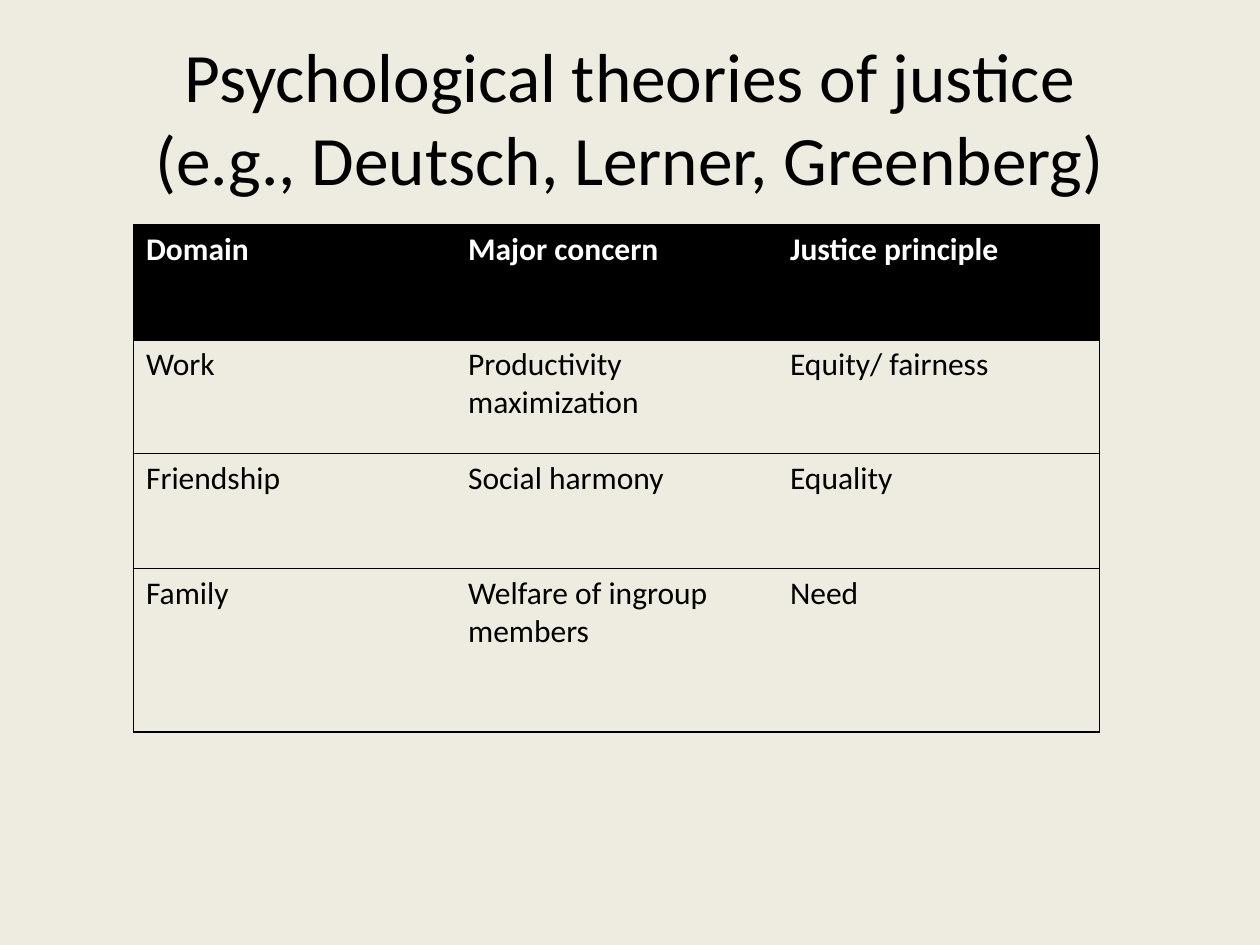
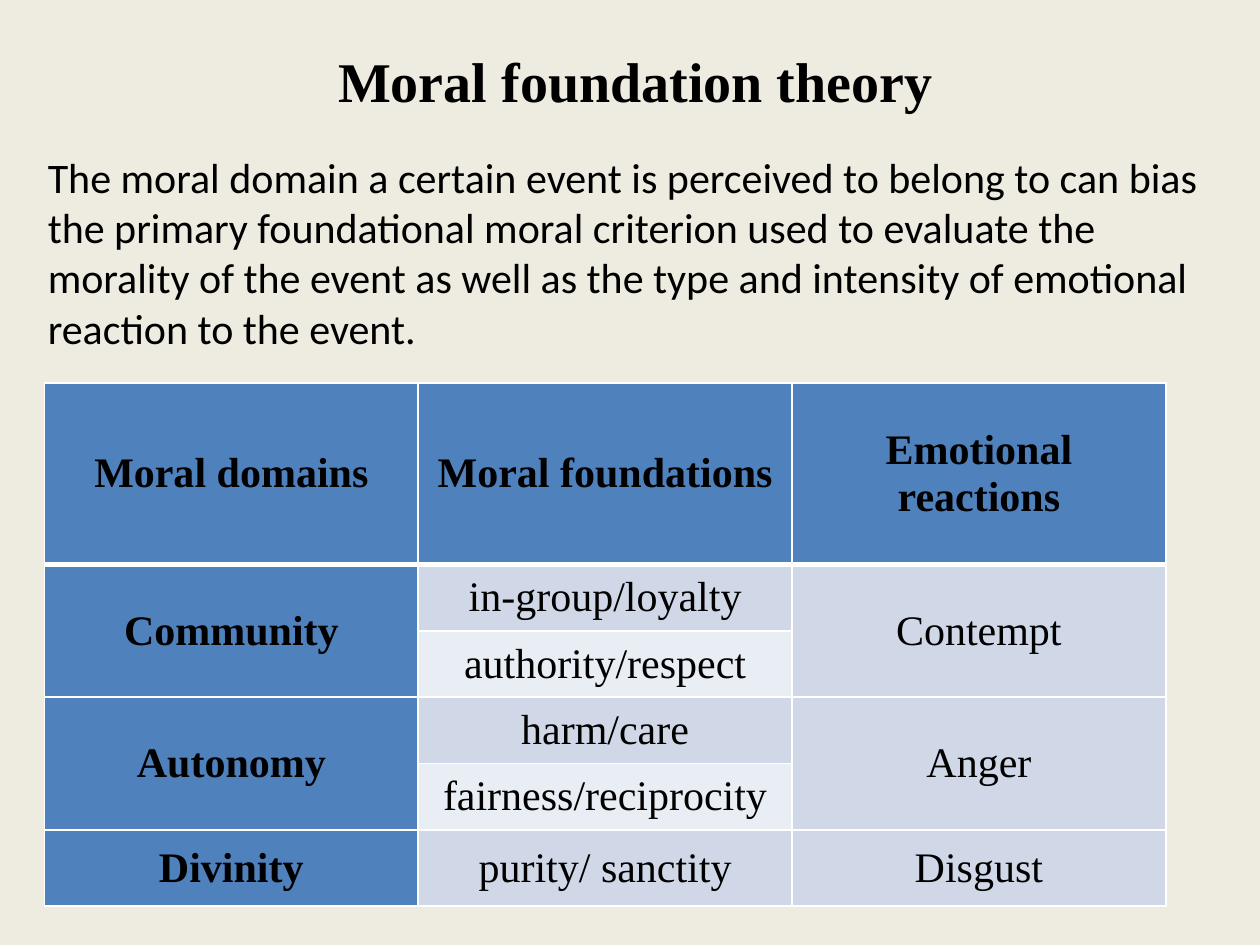
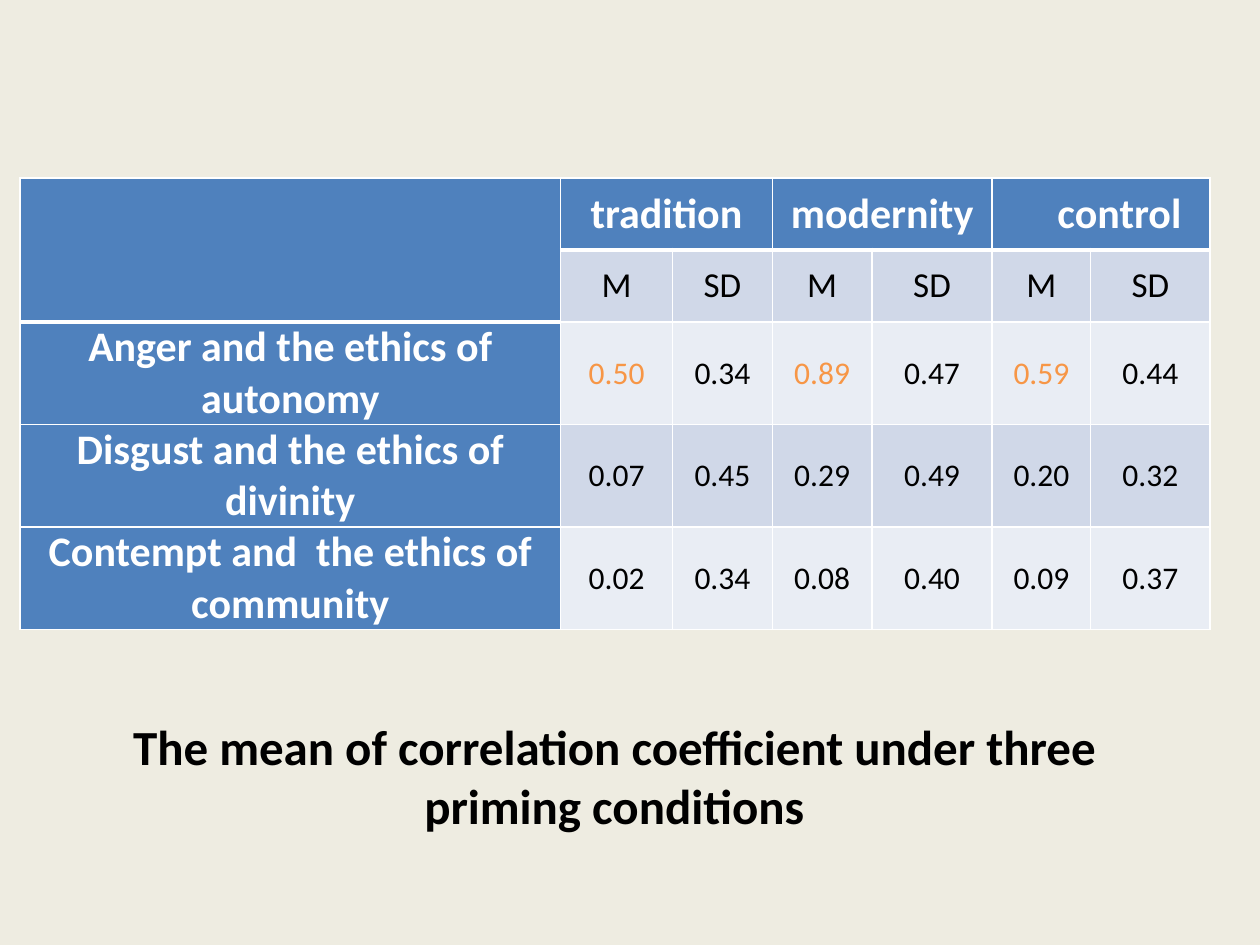
from dataclasses import dataclass, replace
from typing import Any, NamedTuple, Optional

from pptx import Presentation
from pptx.dml.color import RGBColor
from pptx.enum.text import MSO_ANCHOR as Anchor, PP_ALIGN as Align
from pptx.oxml.xmlchemy import OxmlElement as Node
from pptx.util import Pt

CREAM = RGBColor(0xEE, 0xEC, 0xE1)
BLACK = RGBColor(0x00, 0x00, 0x00)
WHITE = RGBColor(0xFF, 0xFF, 0xFF)
BLUE = RGBColor(0x4F, 0x81, 0xBD)
MIST = RGBColor(0xD0, 0xD8, 0xE8)
PALE = RGBColor(0xE9, 0xED, 0xF4)
ORANGE = RGBColor(0xF7, 0x96, 0x46)

SANS = "Calibri"
SERIF = "Times New Roman"
PLAIN = "{2D5ABB26-0587-4C30-8999-92F81FD0307C}"
TIGHT = {"margin_left": Pt(5), "margin_right": Pt(5),
         "margin_top": 0, "margin_bottom": 0,
         "vertical_anchor": Anchor.MIDDLE}


@dataclass(frozen=True)
class Look:
    size: float
    color: RGBColor = BLACK
    bold: bool = False
    font: str = SANS
    align: Align = Align.CENTER
    indent: float = 0


@dataclass(frozen=True)
class Box:
    left: float
    top: float
    width: float
    height: float
    text: str
    look: Look
    anchor: Anchor = Anchor.TOP


class Cell(NamedTuple):
    text: str
    look: Look
    fill: Optional[RGBColor] = None


class Span(NamedTuple):
    row: int
    col: int
    down: int
    right: int


@dataclass(frozen=True)
class Grid:
    left: float
    top: float
    cols: list[float]
    rows: list[float]
    cells: list[list[Cell]]
    heads: list[int]
    line: RGBColor
    thin: float
    inner: bool = True
    spans: tuple[Span, ...] = ()
    form: Optional[dict[str, Any]] = None


def put(item: Any, form: dict[str, Any]) -> None:
    for name, value in form.items():
        setattr(item, name, value)


def write(frame: Any, text: str, look: Look) -> None:
    frame.text = text
    para = frame.paragraphs[0]
    para.alignment = look.align
    if look.indent:
        para._p.get_or_add_pPr().set("indent", str(Pt(look.indent)))
    for run in para.runs:
        put(run.font, {"size": Pt(look.size), "bold": look.bold, "name": look.font})
        run.font.color.rgb = look.color


def draw_box(slide: Any, box: Box) -> None:
    shape = slide.shapes.add_textbox(
        Pt(box.left), Pt(box.top), Pt(box.width), Pt(box.height))
    put(shape.text_frame, {"word_wrap": True, "vertical_anchor": box.anchor})
    write(shape.text_frame, box.text, box.look)


def edge(side: str, width: float, color: RGBColor) -> Any:
    line = Node(f"a:ln{side}")
    line.set("w", str(Pt(width)))
    fill = Node("a:solidFill" if width else "a:noFill")
    if width:
        tint = Node("a:srgbClr")
        tint.set("val", str(color))
        fill.append(tint)
    line.append(fill)
    return line


def frame_cell(cell: Any, grid: Grid, row: int, col: int) -> None:
    head = grid.heads[col]
    last = len(grid.cols) - 1
    widths = {
        "L": grid.thin if grid.inner or col == 0 else 0,
        "R": grid.thin if grid.inner or col == last else 0,
        "T": 3 if row == head else grid.thin,
        "B": 3 if row + 1 == head else grid.thin,
    }
    props = cell._tc.get_or_add_tcPr()
    for spot, (side, width) in enumerate(widths.items()):
        props.insert(spot, edge(side, width, grid.line))


def draw_grid(slide: Any, grid: Grid) -> None:
    table = slide.shapes.add_table(
        len(grid.rows), len(grid.cols), Pt(grid.left), Pt(grid.top),
        Pt(sum(grid.cols)), Pt(sum(grid.rows))).table
    table._tbl.tblPr.find("{*}tableStyleId").text = PLAIN
    for col, width in zip(table.columns, grid.cols):
        col.width = Pt(width)
    for row, height in zip(table.rows, grid.rows):
        row.height = Pt(height)
    for r, line in enumerate(grid.cells):
        for c, item in enumerate(line):
            cell = table.cell(r, c)
            put(cell, grid.form or {})
            if item.fill is None:
                cell.fill.background()
            else:
                cell.fill.solid()
                cell.fill.fore_color.rgb = item.fill
            frame_cell(cell, grid, r, c)
            if item.text:
                write(cell.text_frame, item.text, item.look)
    for row, col, down, right in grid.spans:
        table.cell(row, col).merge(table.cell(row + down - 1, col + right - 1))


def justice() -> tuple[list[Box], Grid]:
    body = Look(18, align=Align.LEFT)
    head = replace(body, color=WHITE, bold=True)
    rows = [
        ("Domain", "Major concern", "Justice principle"),
        ("Work", "Productivity maximization", "Equity/ fairness"),
        ("Friendship", "Social harmony", "Equality"),
        ("Family", "Welfare of ingroup members", "Need"),
    ]
    cells = [[Cell(text, body if r else head, None if r else BLACK) for text in row]
             for r, row in enumerate(rows)]
    title = Box(36, 21.6, 648, 90,
                "Psychological theories of justice\v(e.g., Deutsch, Lerner, Greenberg)",
                Look(39.6), Anchor.MIDDLE)
    return [title], Grid(76.3, 128.2, [184] * 3, [65.5] * 3 + [93.6], cells,
                         [1] * 3, BLACK, 0.75, inner=False)


def morals() -> tuple[list[Box], Grid]:
    body = Look(24, font=SERIF)
    head = replace(body, bold=True)
    rows = [
        ("Moral domains", "Moral foundations", "Emotional reactions"),
        ("Community", "in-group/loyalty", "Contempt"),
        ("", "authority/respect", ""),
        ("Autonomy", "harm/care", "Anger"),
        ("", "fairness/reciprocity", ""),
        ("Divinity", "purity/ sanctity", "Disgust"),
    ]
    cells = [[Cell(text, head, BLUE) if r == 0 or c == 0
              else Cell(text, body, MIST if r % 2 else PALE)
              for c, text in enumerate(row)] for r, row in enumerate(rows)]
    boxes = [
        Box(20.2, 0.7, 686, 90, "Moral foundation theory",
            replace(head, size=32), Anchor.MIDDLE),
        Box(20.2, 82.8, 686, 120,
            "The moral domain a certain event is perceived to belong to can bias "
            "the primary foundational moral criterion used to evaluate the morality "
            "of the event as well as the type and intensity of emotional reaction "
            "to the event.", Look(24, align=Align.LEFT)),
    ]
    spans = tuple(Span(r, c, 2, 1) for r in (1, 3) for c in (0, 2))
    return boxes, Grid(25.4, 218.9, [213.6] * 3, [103.7] + [37.9] * 4 + [43.5],
                       cells, [1] * 3, WHITE, 1, spans=spans, form=TIGHT)


def means() -> tuple[list[Box], Grid]:
    head = Look(24, WHITE, True)
    label = Look(20)
    value = Look(18)
    stats = [
        ("Anger and the ethics of autonomy", "0.50 0.34 0.89 0.47 0.59 0.44"),
        ("Disgust and the ethics of divinity", "0.07 0.45 0.29 0.49 0.20 0.32"),
        ("Contempt and  the ethics of community", "0.02 0.34 0.08 0.40 0.09 0.37"),
    ]
    blank = Cell("", head, BLUE)
    top = [blank]
    for name, indent in (("tradition", 0), ("modernity", 0), ("control", 21)):
        top += [Cell(name, replace(head, indent=indent), BLUE), blank]
    cells = [top, [blank] + [Cell(name, label, MIST) for name in ("M", "SD") * 3]]
    for r, (name, nums) in enumerate(stats):
        fill = MIST if r % 2 else PALE
        looks = [replace(value, color=ORANGE) if r == 0 and c % 2 == 0 else value
                 for c in range(6)]
        cells.append([Cell(name, head, BLUE)]
                     + [Cell(num, look, fill) for num, look in zip(nums.split(), looks)])
    note = Box(53.3, 406, 595.4, 75,
               "The mean of correlation coefficient under three priming conditions",
               Look(28, bold=True))
    spans = (Span(0, 0, 2, 1),) + tuple(Span(0, c, 1, 2) for c in (1, 3, 5))
    return [note], Grid(11.4, 101.6, [309, 64, 57, 57, 68.6, 56.4, 68.2],
                        [41.2] * 2 + [58.6] * 3, cells, [2] + [1] * 6, WHITE, 1,
                        spans=spans, form=TIGHT)


def main() -> None:
    deck = Presentation()
    put(deck, {"slide_width": Pt(720), "slide_height": Pt(540)})
    for boxes, grid in (justice(), morals(), means()):
        slide = deck.slides.add_slide(deck.slide_layouts[6])
        slide.background.fill.solid()
        slide.background.fill.fore_color.rgb = CREAM
        for box in boxes:
            draw_box(slide, box)
        draw_grid(slide, grid)
    deck.save("out.pptx")


if __name__ == "__main__":
    main()
